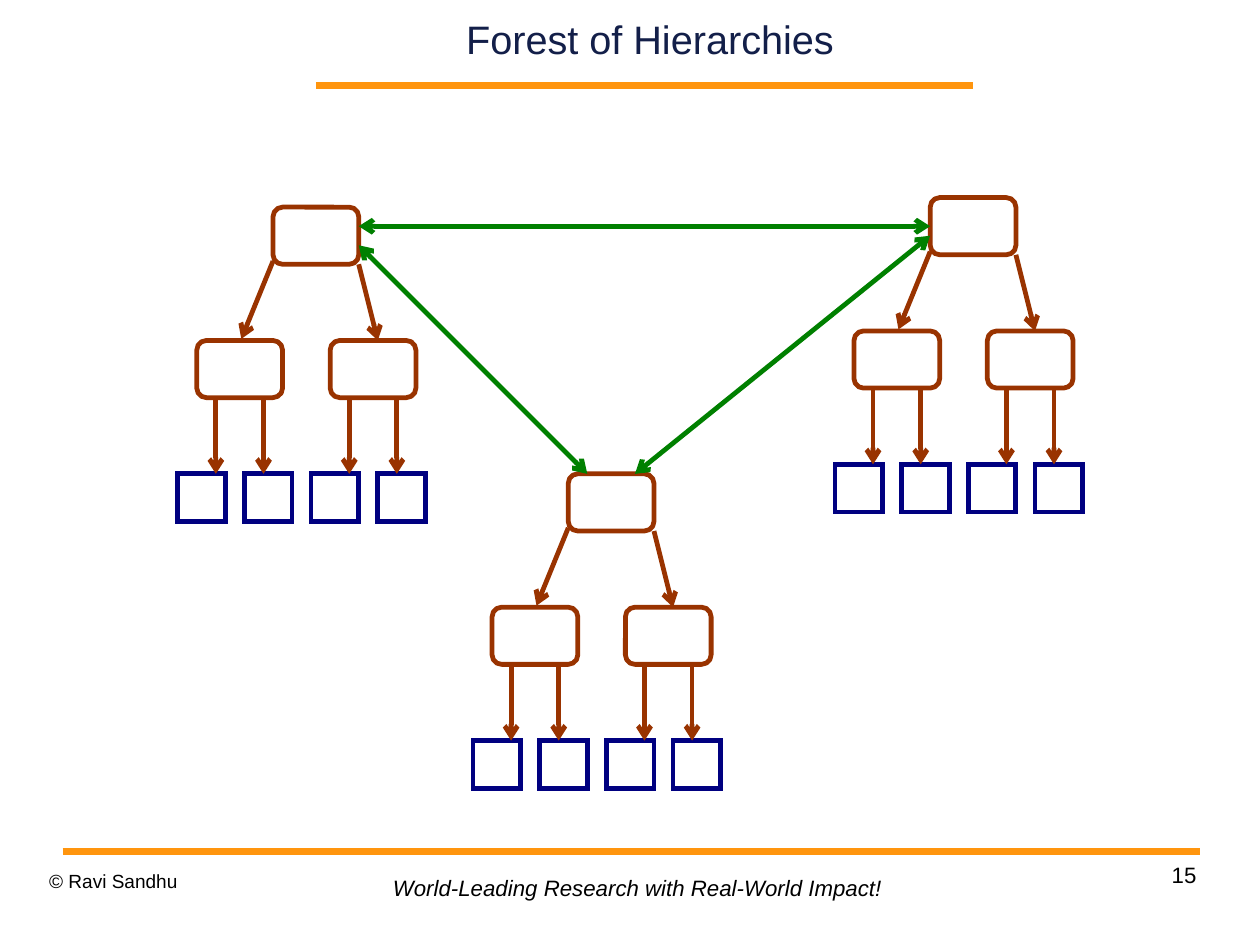
from pptx import Presentation
from pptx.dml.color import RGBColor
from pptx.enum.shapes import MSO_CONNECTOR, MSO_SHAPE
from pptx.enum.text import MSO_ANCHOR, MSO_AUTO_SIZE, PP_ALIGN
from pptx.oxml import parse_xml
from pptx.oxml.ns import nsdecls
from pptx.util import Pt

ORANGE = RGBColor(0xFF, 0x95, 0x0E)
NAVY = RGBColor(0x13, 0x1F, 0x49)
BLACK = RGBColor(0, 0, 0)
BROWN = RGBColor(0x99, 0x33, 0x00)
BLUE = RGBColor(0x00, 0x00, 0x80)
GREEN = RGBColor(0x00, 0x80, 0x00)

# Content: the trees by the top left corner of their root
TITLE = "Forest of Hierarchies"
COPYRIGHT = "© Ravi Sandhu"
MOTTO = "World-Leading Research with Real-World Impact!"
PAGE = "15"
ROOTS = {"bottom": (358, 298.5), "right": (586, 124.5), "left": (172, 130.5)}
# Links between roots, each end as (tree, offset from the root's corner)
PEERS = [
    (("left", 54, 12), ("right", 0, 18)),
    (("left", 54, 24), ("bottom", 12, 0)),
    (("bottom", 42, 0), ("right", 0, 24)),
]
RULES = [(199, 612.9, 54), (39.4, 756, 536.1)]  # left, right, height

# Tree geometry
NODE_W, NODE_H, LEAF = 54, 36, 30
LEVEL = 84
CHILD_X = (-48, 36)
LEAF_X, LEAF_STEP, LEAF_COUNT = -60, 42, 4
BRANCHES = [((0, 34), (-20, 83)), ((NODE_W, NODE_H), (66, LEVEL))]
STEM_X = (12, 42)  # where arrows leave the bottom of a child


def write(box, text, size, color=BLACK, align=PP_ALIGN.LEFT, italic=False,
          anchor=MSO_ANCHOR.TOP, inset=(0, 0), spacing=1.0):
    frame = box.text_frame
    frame.auto_size = MSO_AUTO_SIZE.NONE
    frame.word_wrap = True
    frame.vertical_anchor = anchor
    frame.margin_left = frame.margin_right = Pt(inset[0])
    frame.margin_top = frame.margin_bottom = Pt(inset[1])
    line = frame.paragraphs[0]
    line.alignment = align
    line.line_spacing = spacing
    run = line.add_run()
    run.text = text
    run.font.name = "Arial"
    run.font.size = Pt(size)
    run.font.italic = italic
    run.font.color.rgb = color


def draw_box(shapes, kind, x, y, width, height, color):
    box = shapes.add_shape(kind, Pt(x), Pt(y), Pt(width), Pt(height))
    box.shadow.inherit = False
    box.fill.background()
    box.line.color.rgb = color
    box.line.width = Pt(3)
    if kind == MSO_SHAPE.RECTANGLE:  # sharp corners
        box.line._get_or_add_ln().append(
            parse_xml(f'<a:miter {nsdecls("a")} lim="800000"/>'))


def draw_line(shapes, start, end, color, width=3, arrows=()):
    link = shapes.add_connector(MSO_CONNECTOR.STRAIGHT, *map(Pt, start + end))
    link.line.color.rgb = color
    link.line.width = Pt(width)
    for arrow in arrows:
        link.line._get_or_add_ln().append(
            parse_xml(f'<a:{arrow} {nsdecls("a")} type="arrow"/>'))
    link._element.spPr.append(parse_xml(f'<a:effectLst {nsdecls("a")}/>'))


def draw_tree(shapes, x, y):
    # Root and its children
    for dx, dy in [(0, 0)] + [(child, LEVEL) for child in CHILD_X]:
        draw_box(shapes, MSO_SHAPE.ROUNDED_RECTANGLE, x + dx, y + dy, NODE_W, NODE_H, BROWN)
    # Leaves
    for i in range(LEAF_COUNT):
        draw_box(shapes, MSO_SHAPE.RECTANGLE, x + LEAF_X + i * LEAF_STEP,
                 y + 2 * LEVEL, LEAF, LEAF, BLUE)
    # Arrows down the tree
    stems = [((child + stem, LEVEL + NODE_H), (child + stem, 2 * LEVEL))
             for child in CHILD_X for stem in STEM_X]
    for (x1, y1), (x2, y2) in BRANCHES + stems:
        draw_line(shapes, (x + x1, y + y1), (x + x2, y + y2), BROWN, arrows=["tailEnd"])


def root_point(tree, dx, dy):
    x, y = ROOTS[tree]
    return x + dx, y + dy


def main():
    deck = Presentation()
    deck.slide_width, deck.slide_height = Pt(793.75), Pt(595.25)
    slide = deck.slides.add_slide(deck.slide_layouts[5])
    shapes = slide.shapes

    # Title and rules
    title = shapes.title
    title.left, title.top, title.width, title.height = map(Pt, (205, 4, 409, 40.3))
    write(title, TITLE, 25, color=NAVY, align=PP_ALIGN.CENTER, anchor=MSO_ANCHOR.MIDDLE)
    for left, right, height in RULES:
        draw_line(shapes, (left, height), (right, height), ORANGE, width=4.31)

    # Footer
    page = shapes.add_textbox(Pt(568.8), Pt(542.2), Pt(185), Pt(41))
    write(page, PAGE, 14, align=PP_ALIGN.RIGHT, spacing=1.01)
    rights = shapes.add_textbox(Pt(31), Pt(547.6), Pt(185), Pt(31))
    write(rights, COPYRIGHT, 12, spacing=1.01)
    motto = shapes.add_textbox(Pt(241), Pt(548), Pt(329.8), Pt(23.8))
    write(motto, MOTTO, 14, italic=True, inset=(6.5, 3))

    # Trees and the links between their roots
    for corner in ROOTS.values():
        draw_tree(shapes.add_group_shape().shapes, *corner)
    for start, end in PEERS:
        draw_line(shapes, root_point(*start), root_point(*end), GREEN,
                  arrows=["headEnd", "tailEnd"])

    deck.save("out.pptx")


if __name__ == "__main__":
    main()
